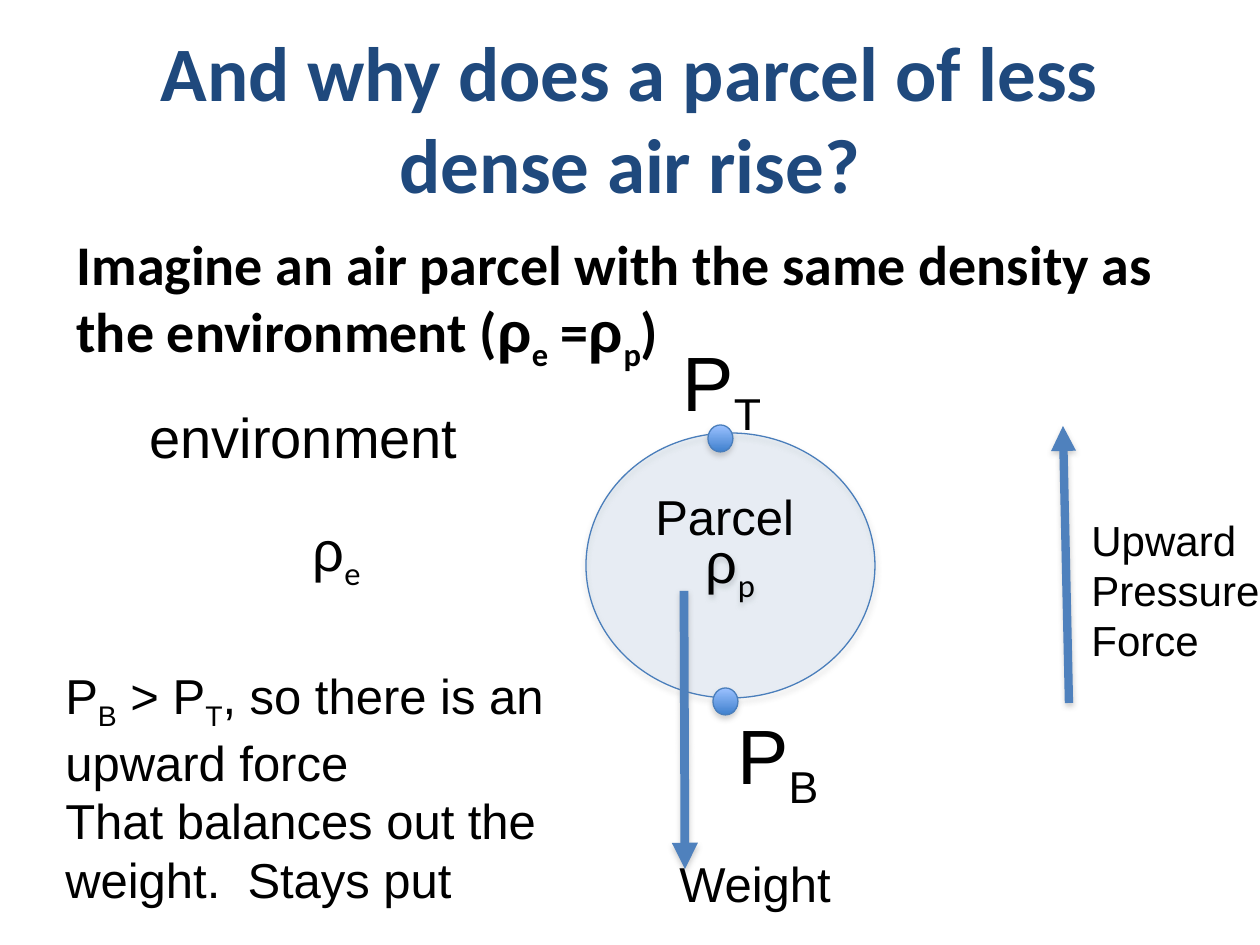
import dataclasses

import pptx
import pptx.dml.color
import pptx.enum.dml
import pptx.enum.shapes
import pptx.enum.text
import pptx.oxml
import pptx.oxml.ns
import pptx.util

ALIGN = pptx.enum.text.PP_ALIGN
ANCHOR = pptx.enum.text.MSO_ANCHOR
AUTO = pptx.enum.text.MSO_AUTO_SIZE
EMU_PER_PX = 914400 / 126


@dataclasses.dataclass(frozen=True)
class Theme:
    heading_font: str = "Calibri"
    label_font: str = "Arial"
    title: str = "1F497D"
    text: str = "000000"
    accent: str = "4F81BD"
    outline: str = "4A7EBB"
    dot_top: str = "9BC1FF"
    dot_bottom: str = "3F80CD"
    shadow: str = "808080"
    huge: int = 44
    large: int = 32
    medium: int = 28
    small: int = 24


THEME = Theme()


def px(n):
    return pptx.util.Emu(round(n * EMU_PER_PX))


def rgb(value):
    return pptx.dml.color.RGBColor.from_string(value)


def sub(text, font=None):
    return text, font, True


def add_runs(p, runs, size, font, color=THEME.text, bold=False):
    for run in runs:
        text, face, lowered = (run, None, False) if isinstance(run, str) else run
        r = p.add_run()
        r.text = text
        r.font.size = pptx.util.Pt(size)
        r.font.name = face or font
        r.font.bold = bold
        r.font.color.rgb = rgb(color)
        if lowered:
            r.font._element.set("baseline", "-25000")


def add_shadow(sp, alpha=None, offset=1.8):
    effects = pptx.oxml.parse_xml(f'<a:effectLst {pptx.oxml.ns.nsdecls("a")}/>')
    if alpha:
        effects.append(pptx.oxml.parse_xml(
            f'<a:outerShdw {pptx.oxml.ns.nsdecls("a")} blurRad="{pptx.util.Pt(3.1)}" '
            f'dist="{pptx.util.Pt(offset)}" dir="5400000" rotWithShape="0">'
            f'<a:srgbClr val="{THEME.shadow}"><a:alpha val="{alpha * 1000}"/></a:srgbClr>'
            '</a:outerShdw>'))
    sp._element.spPr.append(effects)


def fill_placeholder(sp, box, runs, size, color, align, anchor):
    sp.left, sp.top, sp.width, sp.height = map(px, box)
    tf = sp.text_frame
    tf.auto_size = AUTO.NONE
    tf.vertical_anchor = anchor
    p = tf.paragraphs[0]
    pPr = p._p.get_or_add_pPr()
    pPr.set("marL", "0")
    pPr.set("indent", "0")
    pPr.append(pptx.oxml.parse_xml(f'<a:buNone {pptx.oxml.ns.nsdecls("a")}/>'))
    p.alignment = align
    p.space_before = pptx.util.Pt(0)
    add_runs(p, runs, size, THEME.heading_font, color, True)


def add_label(s, box, paragraphs, size, wrap=False):
    tf = s.shapes.add_textbox(*map(px, box)).text_frame
    tf.word_wrap = wrap
    tf.auto_size = AUTO.SHAPE_TO_FIT_TEXT
    for i, runs in enumerate(paragraphs):
        p = tf.add_paragraph() if i else tf.paragraphs[0]
        add_runs(p, runs, size, THEME.label_font)


def add_ellipse(s, box, outlined=True):
    sp = s.shapes.add_shape(pptx.enum.shapes.MSO_SHAPE.OVAL, *map(px, box))
    if outlined:
        sp.line.color.rgb = rgb(THEME.outline)
        sp.line.width = pptx.util.Pt(0.75)
    else:
        sp.fill.background()
        sp.line.fill.background()
    return sp


def add_air(s, box, letter, filled):
    sp = add_ellipse(s, box, filled)
    if filled:
        sp.fill.solid()
        sp.fill.fore_color.rgb = rgb(THEME.accent)
        color = sp._element.spPr.find(".//" + pptx.oxml.ns.qn("a:srgbClr"))
        color.append(pptx.oxml.parse_xml(
            f'<a:alpha {pptx.oxml.ns.nsdecls("a")} val="11000"/>'))
        add_shadow(sp, 35)
    else:
        sp.shadow.inherit = False
    tf = sp.text_frame
    tf.vertical_anchor = ANCHOR.MIDDLE
    p = tf.paragraphs[0]
    p.alignment = ALIGN.CENTER
    add_runs(p, ["ρ", sub(letter, THEME.heading_font)], THEME.large, THEME.label_font)


def add_dot(s, left, top):
    sp = add_ellipse(s, (left, top, 25, 27))
    sp.fill.gradient()
    sp.fill.gradient_angle = 270
    for stop, position, color in zip(sp.fill.gradient_stops, (0, 1),
                                     (THEME.dot_top, THEME.dot_bottom)):
        stop.position = position
        stop.color.rgb = rgb(color)
    add_shadow(sp, 35)


def add_arrow(s, start, end, width):
    line = s.shapes.add_connector(pptx.enum.shapes.MSO_CONNECTOR.STRAIGHT,
                                  *map(px, start + end))
    line.line.color.rgb = rgb(THEME.accent)
    line.line.width = pptx.util.Pt(width)
    line.line._get_or_add_ln().append(pptx.oxml.parse_xml(
        f'<a:tailEnd {pptx.oxml.ns.nsdecls("a")} type="triangle"/>'))
    add_shadow(line, 38, 1.6)


def main():
    prs = pptx.Presentation()
    prs.slide_width, prs.slide_height = px(1260), px(945)
    s = prs.slides.add_slide(prs.slide_layouts[1])

    fill_placeholder(s.shapes.title, (63, 38, 1134, 158),
                     ["And why does a parcel of less dense air rise?"],
                     THEME.huge, THEME.title, ALIGN.CENTER, ANCHOR.MIDDLE)
    rho = ("ρ", THEME.label_font, False)
    fill_placeholder(s.placeholders[1], (64, 223, 1134, 624),
                     ["Imagine an air parcel with the same density as the environment (",
                      rho, sub("e"), " =", rho, sub("p"), ")"],
                     THEME.large, THEME.text, ALIGN.LEFT, ANCHOR.TOP)

    add_air(s, (586, 433, 289, 265), "p", True)
    add_air(s, (192, 421, 289, 265), "e", False)
    add_arrow(s, (1069, 703), (1063, 426), 4.75)
    add_label(s, (1079, 508, 195, 165), [["Upward"], ["Pressure"], ["Force"]], THEME.small)
    add_label(s, (137, 396, 336, 81), [["environment"]], THEME.large)
    add_label(s, (643, 480, 166, 72), [["Parcel"]], THEME.medium)
    add_label(s, (670, 328, 108, 106), [["P", sub("T")]], THEME.huge)
    add_label(s, (725, 701, 186, 106), [["P", sub("B")]], THEME.huge, True)
    add_arrow(s, (684, 591), (685, 869), 5)
    add_label(s, (667, 847, 179, 72), [["Weight"]], THEME.medium)
    add_label(s, (53, 659, 554, 251),
              [["P", sub("B"), " > P", sub("T"), ", so there is an upward force"],
               ["That balances out the weight.  Stays put"]], THEME.medium, True)
    add_dot(s, 708, 425)
    add_dot(s, 713, 688)

    prs.save("out.pptx")


if __name__ == "__main__":
    main()
